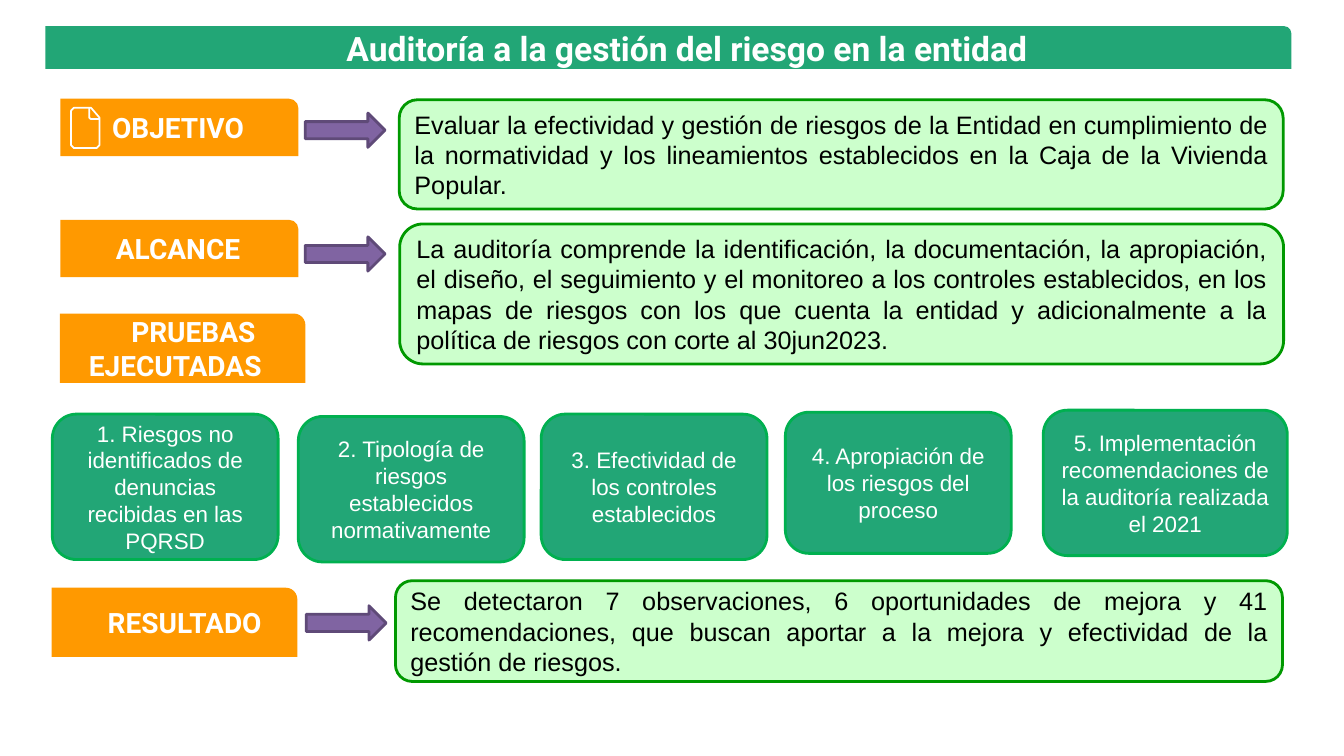
from pptx import Presentation
from pptx.dml.color import RGBColor
from pptx.enum.shapes import MSO_SHAPE
from pptx.enum.text import MSO_ANCHOR, MSO_AUTO_SIZE, PP_ALIGN
from pptx.util import Pt

TAB, ROUND, ARROW = (MSO_SHAPE.ROUND_1_RECTANGLE, MSO_SHAPE.ROUNDED_RECTANGLE,
                     MSO_SHAPE.RIGHT_ARROW)
MIDDLE = MSO_ANCHOR.MIDDLE
CENTER, JUSTIFY = PP_ALIGN.CENTER, PP_ALIGN.JUSTIFY
WHITE = RGBColor(0xFF, 0xFF, 0xFF)
BLACK = RGBColor(0, 0, 0)
ORANGE = RGBColor(0xFF, 0x99, 0x00)
GREEN = RGBColor(0x22, 0xA6, 0x76)
EDGE = RGBColor(0x00, 0xB0, 0x50)
PALE = RGBColor(0xCC, 0xFF, 0xCC)
DARK = RGBColor(0x00, 0x99, 0x00)
PURPLE = RGBColor(0x80, 0x64, 0xA2)
PLUM = RGBColor(0x5F, 0x4A, 0x78)

# Content: boxes are left, top, width, height in points
TITLE = "Auditoría a la gestión del riesgo en la entidad"
# label, box, first-line indent, extra right inset
LABELS = [
    ("OBJETIVO", (43.2, 70.5, 170, 41), 0, 0),
    ("ALCANCE", (43.2, 157, 170, 41), 0, 0),
    ("PRUEBAS EJECUTADAS", (42.7, 224, 175.5, 49.5), 26, 8),
    ("RESULTADO", (36.9, 419.8, 175.5, 49.5), 17, 0),
]
# text, box, arrow left and top
PANELS = [
    ("Evaluar la efectividad y gestión de riesgos de la Entidad en cumplimiento "
     "de la normatividad y los lineamientos establecidos en la Caja de la "
     "Vivienda Popular.", (285.2, 71.3, 631.4, 78), (218, 80.8)),
    ("La auditoría comprende la identificación, la documentación, la "
     "apropiación, el diseño, el seguimiento y el monitoreo a los controles "
     "establecidos, en los mapas de riesgos con los que cuenta la entidad y "
     "adicionalmente a la política de riesgos con corte al 30jun2023.",
     (285.5, 160, 631.4, 100), (218, 169.2)),
    ("Se detectaron 7 observaciones, 6 oportunidades de mejora y 41 "
     "recomendaciones, que buscan aportar a la mejora y efectividad de la "
     "gestión de riesgos.", (282.5, 414.8, 633.6, 72), (218.8, 432.7)),
]
TESTS = [
    ("1. Riesgos no identificados de denuncias recibidas en las PQRSD",
     (37.4, 295.8, 161.3, 103.9)),
    ("2. Tipología de riesgos establecidos normativamente",
     (213.1, 297.5, 161.3, 103.9)),
    ("3. Efectividad de los controles establecidos",
     (386.6, 295.8, 161.3, 103.9)),
    ("4. Apropiación de los riesgos del proceso",
     (561, 294.5, 161.3, 100.8)),
    ("5. Implementación recomendaciones de la auditoría realizada el 2021",
     (745.2, 293, 174.3, 103.9)),
]
# Page icon: outline and folded corner
PAGE = [(65, 77), (71, 84), (71, 103.8), (69, 105.8), (52.8, 105.8),
        (50.8, 103.8), (50.8, 79), (52.8, 77), (65, 77)]
FOLD = [(63.7, 77), (63.7, 84), (64.7, 85), (71, 85)]

prs = Presentation()
prs.slide_width, prs.slide_height = Pt(960), Pt(540)
slide = prs.slides.add_slide(prs.slide_layouts[5])
shapes = slide.shapes


def draw(kind, box, fill, line=None):
    item = shapes.add_shape(kind, *map(Pt, box))
    item.shadow.inherit = False
    item.fill.solid()
    item.fill.fore_color.rgb = fill
    if line is None:
        item.line.fill.background()
    else:
        item.line.color.rgb = line
        item.line.width = Pt(2)
    return item


def write(item, text, font, size, color, align=CENTER, bold=False):
    frame = item.text_frame
    frame.text = text
    frame.word_wrap = True
    frame.vertical_anchor = MIDDLE
    para = frame.paragraphs[0]
    para.alignment = align
    face = para.runs[0].font
    face.name, face.size, face.bold = font, Pt(size), bold
    face.color.rgb = color
    return frame


# Title on its bar
bar = draw(TAB, (32.4, 18.7, 890, 30.5), GREEN)
title = shapes.title
title.left, title.top, title.width, title.height = map(Pt, (162.7, 10, 656, 48.2))
write(title, TITLE, "Roboto", 24, WHITE, bold=True).auto_size = MSO_AUTO_SIZE.NONE
bar._element.addnext(title._element)

# Orange labels
for text, box, indent, extra in LABELS:
    frame = write(draw(TAB, box, ORANGE), text, "Roboto", 20, WHITE, bold=True)
    frame.margin_top = frame.margin_bottom = 0
    frame.margin_right = Pt(7.2 + extra)
    if indent:
        props = frame.paragraphs[0]._p.get_or_add_pPr()
        props.set("marL", "0")
        props.set("indent", str(Pt(indent)))

# Arrows and pale panels
for text, box, spot in PANELS:
    draw(ARROW, (*spot, 57, 24.5), PURPLE, PLUM)
    write(draw(ROUND, box, PALE, DARK), text, "Arial", 18, BLACK, JUSTIFY)

# Executed tests
for text, box in TESTS:
    write(draw(ROUND, box, GREEN, EDGE), text, "Arial", 16, WHITE)

# Page icon
page, fold = ([(Pt(x), Pt(y)) for x, y in part] for part in (PAGE, FOLD))
pen = shapes.build_freeform(*page[0])
pen.add_line_segments(page[1:], close=False)
pen.move_to(*fold[0])
pen.add_line_segments(fold[1:], close=False)
icon = pen.convert_to_shape()
icon.shadow.inherit = False
icon.fill.background()
icon.line.color.rgb = WHITE
icon.line.width = Pt(1.25)

prs.save("out.pptx")
